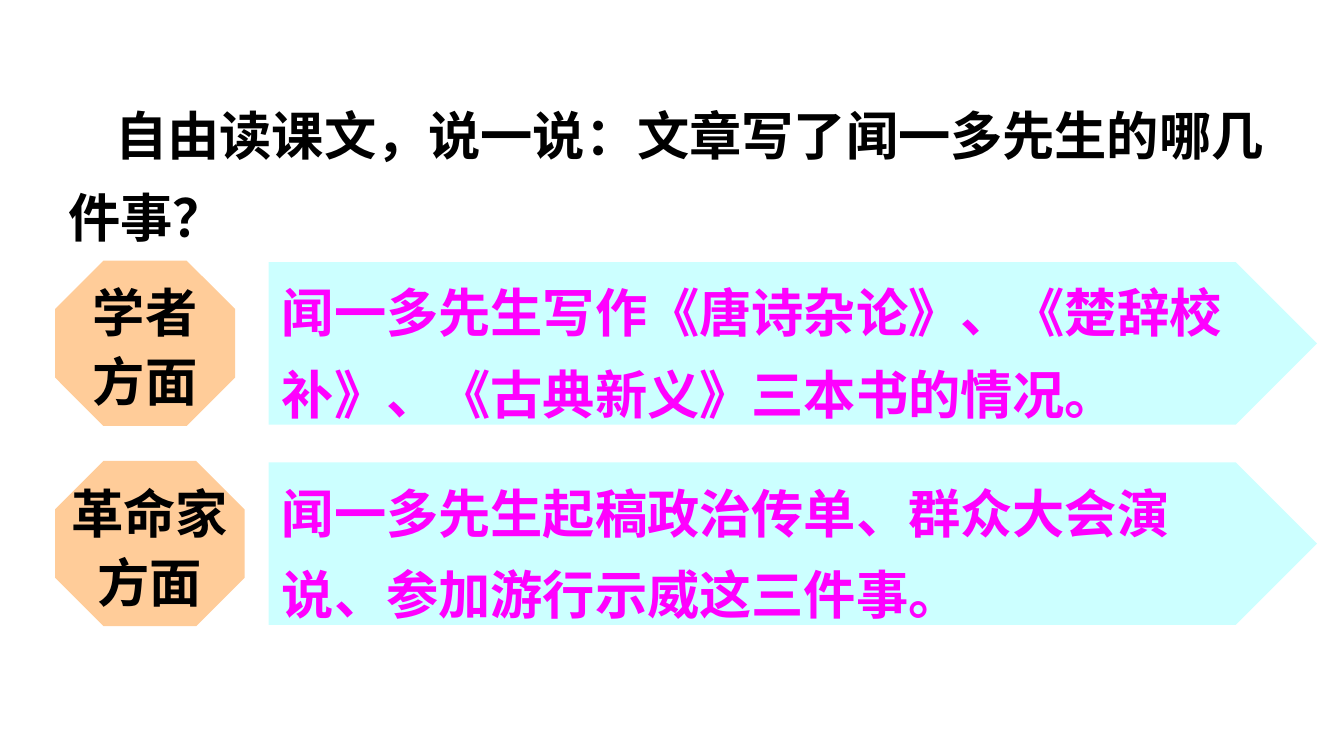
import pptx
import pptx.dml.color
import pptx.enum.shapes
import pptx.enum.text
import pptx.oxml.ns
import pptx.util
from lxml import etree

WIDE = 10
HIGH = WIDE * 9 / 16
LEFT, TOP, STEP = 0.41, 1.94, 1.49
FACE = "Noto Sans CJK SC"
HUES = {"ink": "000000", "peach": "FFCC99", "aqua": "CCFFFF", "pink": "FF00FF"}
FONT = {"name": FACE, "size": pptx.util.Pt(28), "bold": True}
KIND = pptx.enum.shapes.MSO_SHAPE
SIDE = pptx.enum.text.PP_ALIGN
ROWS = [
    (["学者", "方面"], 1.34,
     "闻一多先生写作《唐诗杂论》、《楚辞校补》、《古典新义》三本书的情况。"),
    (["革命家", "方面"], 1.41,
     "闻一多先生起稿政治传单、群众大会演说、参加游行示威这三件事。"),
]


def tint(name):
    """Return the named colour."""
    return pptx.dml.color.RGBColor.from_string(HUES[name])


def inch(*sizes):
    """Turn numbers into lengths in inches."""
    return [pptx.util.Inches(size) for size in sizes]


def write(frame, lines, hue, form):
    """Fill a text frame with one formatted paragraph per line."""
    for i, line in enumerate(lines):
        para = frame.add_paragraph() if i else frame.paragraphs[0]
        for key, value in form.items():
            setattr(para, key, value)
        para._p.get_or_add_pPr().set("hangingPunct", "0")
        run = para.add_run()
        run.text = line
        for key, value in FONT.items():
            setattr(run.font, key, value)
        run.font.color.rgb = tint(hue)
        east = etree.SubElement(run._r.get_or_add_rPr(), pptx.oxml.ns.qn("a:ea"))
        east.set("typeface", FACE)


def title(slide, text):
    """Add the question with an indented first line."""
    box = slide.shapes.add_textbox(*inch(LEFT, 0.58, WIDE - 2 * LEFT, 1.27))
    box.text_frame.word_wrap = True
    form = {"alignment": SIDE.LEFT, "line_spacing": 1.3}
    write(box.text_frame, [text], "ink", form)
    props = box.text_frame.paragraphs[0]._p.get_or_add_pPr()
    props.set("indent", str(pptx.util.Inches(0.35)))


def panel(slide, kind, place, fill, wrap):
    """Add a plain filled shape and return it."""
    shape = slide.shapes.add_shape(kind, *inch(*place))
    shape.shadow.inherit = False
    shape.fill.solid()
    shape.fill.fore_color.rgb = tint(fill)
    shape.line.fill.background()
    shape.text_frame.word_wrap = wrap
    shape.text_frame.vertical_anchor = pptx.enum.text.MSO_ANCHOR.MIDDLE
    return shape


def badge(slide, top, width, lines):
    """Add an octagon naming a side of his life."""
    shape = panel(slide, KIND.OCTAGON, (LEFT, top, width, 1.23), "peach", False)
    shape.adjustments[0] = 0.293
    form = {"alignment": SIDE.CENTER, "line_spacing": 1.1}
    write(shape.text_frame, lines, "ink", form)


def arrow(slide, top, text):
    """Add a pentagon arrow telling the events."""
    place = (WIDE * 0.2, top + 0.01, WIDE * 0.78, 1.21)
    shape = panel(slide, KIND.PENTAGON, place, "aqua", True)
    form = {"alignment": SIDE.LEFT, "line_spacing": 1.3}
    write(shape.text_frame, [text], "pink", form)


def main():
    """Build and save the slide."""
    deck = pptx.Presentation()
    deck.slide_width, deck.slide_height = inch(WIDE, HIGH)
    slide = deck.slides.add_slide(deck.slide_layouts[6])
    title(slide, "自由读课文，说一说：文章写了闻一多先生的哪几件事？")
    for i, (lines, width, text) in enumerate(ROWS):
        top = TOP + i * STEP
        badge(slide, top, width, lines)
        arrow(slide, top, text)
    deck.save("out.pptx")


if __name__ == "__main__":
    main()
